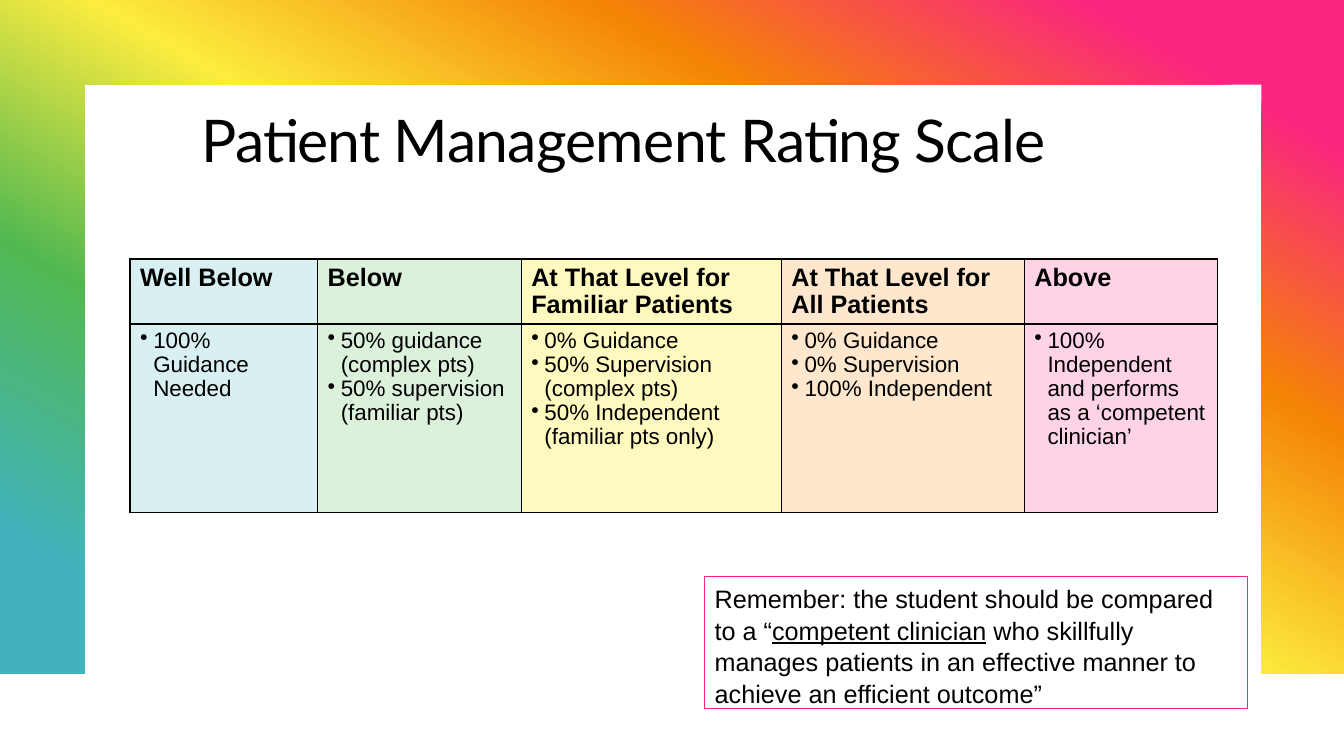
"""Build the Patient Management Rating Scale slide."""
from dataclasses import dataclass

import pptx
import pptx.dml.color
import pptx.enum.shapes
import pptx.enum.text
import pptx.oxml
import pptx.oxml.ns
import pptx.util

Inches = pptx.util.Inches
Pt = pptx.util.Pt
INK = "000000"
PINK = "FA2481"
BODY_FONT = "Arial"
RAINBOW = [(10, PINK), (30, "F58505"), (50, "FCEC3F"), (70, "51B851"), (90, "42B3BD")]
FRAME_OUTLINE = [(0, 0), (13.33, 0), (13.33, 6.68), (12.51, 6.68),
                 (12.51, 0.84), (0.84, 0.84), (0.84, 6.68), (0, 6.68)]


@dataclass
class Rating:
    level: str
    criteria: list[str]
    tint: str
    width: float


RATINGS = [
    Rating("Well Below", ["100% Guidance Needed"], "D9F0F2", 1.86),
    Rating("Below", ["50% guidance (complex pts)", "50% supervision (familiar pts)"],
           "DCF1DC", 2.02),
    Rating("At That Level for Familiar Patients",
           ["0% Guidance", "50% Supervision (complex pts)",
            "50% Independent (familiar pts only)"], "FEF9BF", 2.58),
    Rating("At That Level for All Patients",
           ["0% Guidance", "0% Supervision", "100% Independent"], "FEE7CC", 2.41),
    Rating("Above", ["100% Independent and performs as a ‘competent clinician’"],
           "FED3E6", 1.92),
]


def rgb(value: str) -> pptx.dml.color.RGBColor:
    return pptx.dml.color.RGBColor.from_string(value)


def drawing_xml(markup: str):
    head, rest = markup.split(" ", 1)
    return pptx.oxml.parse_xml(f"{head} {pptx.oxml.ns.nsdecls('a')} {rest}")


def style_paragraph(paragraph, size: float, font: str = BODY_FONT,
                    bold: bool = False, spacing: float = 1.0) -> None:
    paragraph.font.size = Pt(size)
    paragraph.font.name = font
    paragraph.font.bold = bold
    paragraph.font.color.rgb = rgb(INK)
    paragraph.line_spacing = spacing


def add_rainbow_frame(slide) -> None:
    start, *corners = [(Inches(x), Inches(y)) for x, y in FRAME_OUTLINE]
    builder = slide.shapes.build_freeform(*start)
    builder.add_line_segments(corners, close=True)
    frame = builder.convert_to_shape()
    frame.shadow.inherit = False
    frame.line.fill.background()
    frame.fill.gradient()
    stops = "".join(f'<a:gs pos="{position * 1000}"><a:srgbClr val="{color}"/></a:gs>'
                    for position, color in RAINBOW)
    properties = frame._element.spPr
    gradient = properties.find(pptx.oxml.ns.qn("a:gradFill"))
    properties.replace(gradient, drawing_xml(
        f'<a:gradFill rotWithShape="1"><a:gsLst>{stops}</a:gsLst>'
        '<a:lin ang="7200000" scaled="0"/></a:gradFill>'))
    slide.shapes._spTree.insert(2, frame._element)


def set_title(slide) -> None:
    title = slide.shapes.title
    title.left, title.top = Inches(1.9), Inches(1.03)
    title.width, title.height = Inches(10), Inches(0.96)
    frame = title.text_frame
    frame.text = "Patient Management Rating Scale"
    frame.vertical_anchor = pptx.enum.text.MSO_ANCHOR.TOP
    frame.auto_size = pptx.enum.text.MSO_AUTO_SIZE.NONE
    heading = frame.paragraphs[0]
    heading.alignment = pptx.enum.text.PP_ALIGN.LEFT
    style_paragraph(heading, 42, "Lato", spacing=0.95)
    heading.runs[0].font._element.set("spc", "-50")


def fill_cell(cell, lines: list[str], tint: str, is_header: bool) -> None:
    cell.fill.solid()
    cell.fill.fore_color.rgb = rgb(tint)
    for index, side in enumerate("LRTB"):
        cell._tc.tcPr.insert(index, drawing_xml(
            f'<a:ln{side} w="12700"><a:solidFill><a:srgbClr val="{INK}"/>'
            f'</a:solidFill></a:ln{side}>'))
    cell.text_frame.text = "\n".join(lines)
    for paragraph in cell.text_frame.paragraphs:
        style_paragraph(paragraph, 18 if is_header else 16, bold=is_header, spacing=0.97)
        if not is_header:
            indents = paragraph._p.get_or_add_pPr()
            indents.set("marL", str(Inches(0.13)))
            indents.set("indent", str(Inches(-0.13)))
            bullet = drawing_xml('<a:buChar char="•"/>')
            indents.insert_element_before(bullet, "a:tabLst", "a:defRPr", "a:extLst")


def add_rating_table(slide) -> None:
    total_width = sum(rating.width for rating in RATINGS)
    table = slide.shapes.add_table(2, len(RATINGS), Inches(1.29), Inches(2.57),
                                   Inches(total_width), Inches(2.47)).table
    table.first_row = False
    table.horz_banding = False
    table.rows[0].height = Inches(0.6)
    table.rows[1].height = Inches(1.87)
    for column, rating in enumerate(RATINGS):
        table.columns[column].width = Inches(rating.width)
        fill_cell(table.cell(0, column), [rating.level], rating.tint, True)
        fill_cell(table.cell(1, column), rating.criteria, rating.tint, False)


def add_reminder(slide) -> None:
    reminder = slide.shapes.add_shape(pptx.enum.shapes.MSO_SHAPE.RECTANGLE, Inches(6.99),
                                      Inches(5.72), Inches(5.38), Inches(1.31))
    reminder.shadow.inherit = False
    reminder.fill.background()
    reminder.line.color.rgb = rgb(PINK)
    reminder.line.width = Pt(0.75)
    frame = reminder.text_frame
    frame.word_wrap = True
    frame.auto_size = pptx.enum.text.MSO_AUTO_SIZE.SHAPE_TO_FIT_TEXT
    frame.vertical_anchor = pptx.enum.text.MSO_ANCHOR.TOP
    advice = frame.paragraphs[0]
    advice.alignment = pptx.enum.text.PP_ALIGN.LEFT
    style_paragraph(advice, 18, spacing=1.05)
    advice.add_run().text = "Remember: the student should be compared to a “"
    standard = advice.add_run()
    standard.text = "competent clinician"
    standard.font.underline = True
    advice.add_run().text = (" who skillfully manages patients in an effective manner "
                             "to achieve an efficient outcome”")


def main() -> None:
    deck = pptx.Presentation()
    deck.slide_width, deck.slide_height = Inches(13.33), Inches(7.5)
    slide = deck.slides.add_slide(deck.slide_layouts.get_by_name("Title Only"))
    add_rainbow_frame(slide)
    set_title(slide)
    add_rating_table(slide)
    add_reminder(slide)
    deck.save("out.pptx")


if __name__ == "__main__":
    main()
